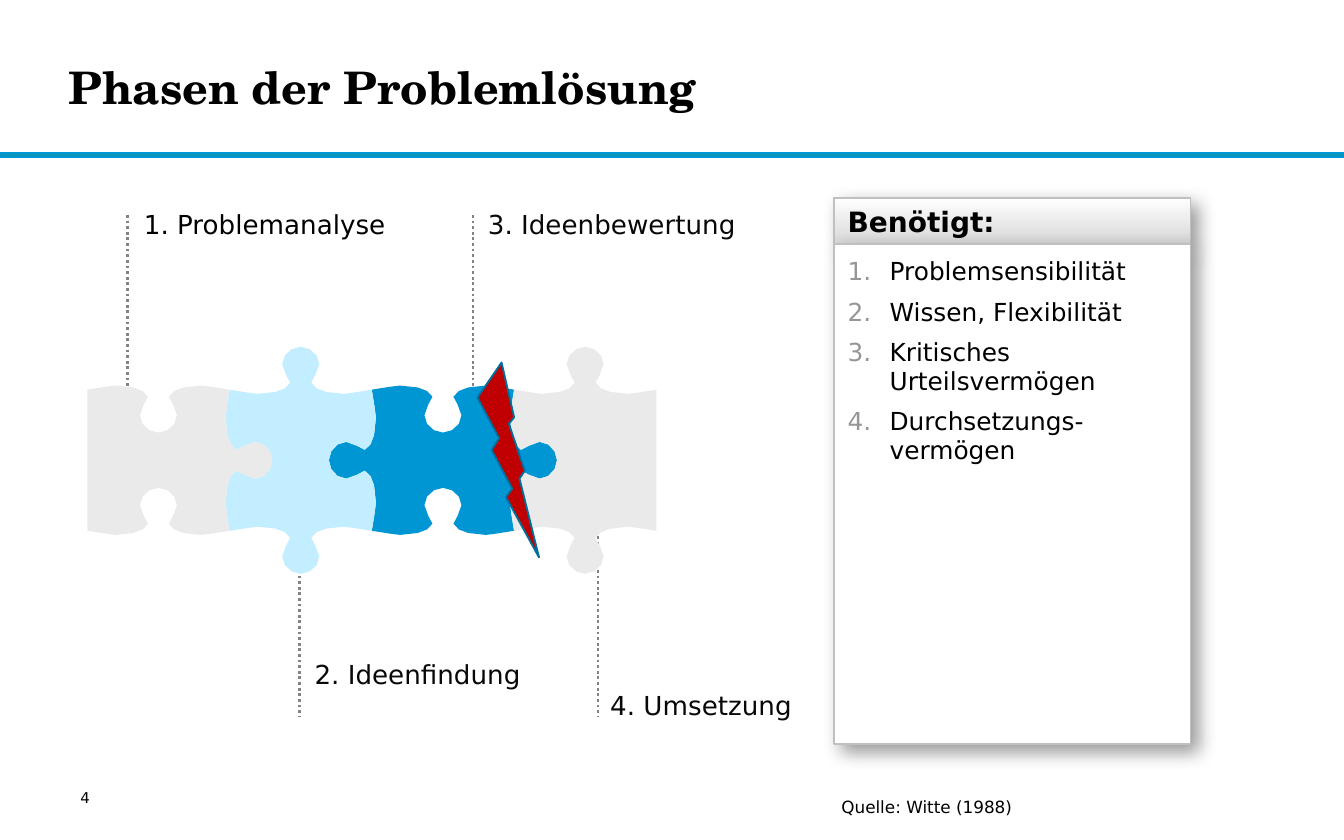
"""Builds a slide with the four phases of problem solving as a jigsaw."""
from math import hypot

from lxml.etree import SubElement
from pptx import Presentation
from pptx.dml.color import RGBColor
from pptx.enum.dml import MSO_LINE
from pptx.enum.shapes import MSO_CONNECTOR, MSO_SHAPE
from pptx.enum.text import MSO_ANCHOR, PP_ALIGN
from pptx.oxml.ns import qn
from pptx.util import Pt

BLACK = RGBColor(0x00, 0x00, 0x00)
INK = RGBColor(0x08, 0x08, 0x08)
WHITE = RGBColor(0xFF, 0xFF, 0xFF)
SILVER = RGBColor(0xD7, 0xD7, 0xD7)
BORDER = RGBColor(0xC0, 0xC0, 0xC0)
NUMBER = RGBColor(0x96, 0x96, 0x96)
DOTS = RGBColor(0x86, 0x82, 0x82)
TEAL = RGBColor(0x0C, 0x94, 0xB7)
BLUE = RGBColor(0x00, 0x96, 0xD3)
DARK_BLUE = RGBColor(0x00, 0x6F, 0x9C)
LIGHT_BLUE = RGBColor(0xC3, 0xEE, 0xFF)
GREY = RGBColor(0xEA, 0xEA, 0xEA)
RED = RGBColor(0xC0, 0x00, 0x00)

BODY_FONT = "DejaVu Sans"
TITLE_FONT = "TeX Gyre Schola"

PIECE_LEFT, PIECE_TOP, PIECE_WIDTH, PIECE_HEIGHT = 46.8, 208.8, 76.2, 75.6
EDGE_LENGTH = 76
HALF_KNOB = [(0, 0), (9.4, -1.5), (15.1, -2.2), (24.5, -1.2), (29.5, 0.7), (32.4, 3.8),
             (30.2, 7.9), (28.1, 13.7), (29.5, 18.3), (33.2, 21.7), (38, 23)]
KNOB = HALF_KNOB + [(EDGE_LENGTH - along, out) for along, out in HALF_KNOB[-2::-1]]
# Knob direction per side, clockwise from the top: 1 out, -1 in, 0 flat.
PIECES = [
    (2, BLUE, (-1, 1, -1, 1)),
    (1, LIGHT_BLUE, (1, -1, 1, -1)),
    (3, GREY, (1, 0, 1, -1)),
    (0, GREY, (-1, 1, -1, 0)),
]
CALLOUTS = [
    ("1. Problemanalyse", 68.4, 115.2, 225.4, 71.3, 105.8, BLACK),
    ("3. Ideenbewertung", 253.4, 115.2, 220.3, 255.6, 105.8, INK),
    ("4. Umsetzung", 320.4, 287.3, 383.8, 321.1, 363.6, INK),
    ("2. Ideenfindung", 160.6, 287.3, 383.8, 162.7, 347, INK),
]
NEEDS = ["Problemsensibilität", "Wissen, Flexibilität",
         "Kritisches Urteilsvermögen", "Durchsetzungs-vermögen"]


def edge(start, end, direction):
    if direction == 0:
        return [start, end]
    length = hypot(end[0] - start[0], end[1] - start[1])
    ux, uy = (end[0] - start[0]) / length, (end[1] - start[1]) / length
    scale = length / EDGE_LENGTH
    return [(start[0] + along * scale * ux + direction * out * uy,
             start[1] + along * scale * uy - direction * out * ux)
            for along, out in KNOB]


def write(shape, *lines, size=14, color=BLACK, font=BODY_FONT, bold=False,
          align=PP_ALIGN.LEFT, anchor=MSO_ANCHOR.TOP, insets=(7.2, 3.6, 7.2, 3.6),
          numbered=False):
    frame = shape.text_frame
    frame.word_wrap = True
    frame.vertical_anchor = anchor
    (frame.margin_left, frame.margin_top,
     frame.margin_right, frame.margin_bottom) = map(Pt, insets)
    for index, line in enumerate(lines):
        paragraph = frame.paragraphs[0] if index == 0 else frame.add_paragraph()
        paragraph.alignment = align
        if numbered:
            properties = paragraph._p.get_or_add_pPr()
            properties.set("marL", str(Pt(22.5)))
            properties.set("indent", str(Pt(-22.5)))
            bullet_color = SubElement(properties, qn("a:buClr"))
            SubElement(bullet_color, qn("a:srgbClr"), val=str(NUMBER))
            SubElement(properties, qn("a:buAutoNum"), type="arabicPeriod")
            paragraph.line_spacing = 0.95
            paragraph.space_after = Pt(6.7)
        run = paragraph.add_run()
        run.text = line
        run.font.name, run.font.size, run.font.bold = font, Pt(size), bold
        run.font.color.rgb = color


class SlideBuilder:
    def __init__(self, slide):
        self.shapes = slide.shapes

    def style(self, shape, fill, line=None):
        shape.shadow.inherit = False
        shape.fill.solid()
        shape.fill.fore_color.rgb = fill
        if line is None:
            shape.line.fill.background()
        else:
            shape.line.color.rgb = line
            shape.line.width = Pt(1)
        return shape

    def preset(self, kind, box, fill, line):
        return self.style(self.shapes.add_shape(kind, *map(Pt, box)), fill, line)

    def text(self, box, *lines, **formats):
        write(self.shapes.add_textbox(*map(Pt, box)), *lines, **formats)

    def dotted_line(self, x, top, bottom):
        line = self.shapes.add_connector(MSO_CONNECTOR.STRAIGHT,
                                         Pt(x), Pt(top), Pt(x), Pt(bottom))
        line.line.color.rgb = DOTS
        line.line.width = Pt(1.5)
        line.line.dash_style = MSO_LINE.ROUND_DOT
        SubElement(line._element.spPr, qn("a:effectLst"))

    def puzzle_piece(self, column, fill, directions):
        left, top = PIECE_LEFT + column * PIECE_WIDTH, PIECE_TOP
        right, bottom = left + PIECE_WIDTH, top + PIECE_HEIGHT
        corners = [(left, top), (right, top), (right, bottom), (left, bottom)]
        points = []
        for side, direction in enumerate(directions):
            points += edge(corners[side], corners[(side + 1) % 4], direction)[:-1]
        outline = [(Pt(x), Pt(y)) for x, y in points]
        builder = self.shapes.build_freeform(*outline[0])
        builder.add_line_segments(outline[1:], close=True)
        self.style(builder.convert_to_shape(), fill)

    def panel(self, box):
        shape = self.preset(MSO_SHAPE.RECTANGLE, box, WHITE, BORDER)
        effects = shape._element.spPr.find(qn("a:effectLst"))
        shadow = SubElement(effects, qn("a:outerShdw"), blurRad=str(Pt(10)),
                            dist=str(Pt(5)), dir=str(45 * 60000),
                            algn="tl", rotWithShape="0")
        shadow_color = SubElement(shadow, qn("a:srgbClr"), val=str(BLACK))
        SubElement(shadow_color, qn("a:alpha"), val="40000")
        return shape

    def gradient_panel(self, box):
        shape = self.panel(box)
        shape.fill.gradient()
        shape.fill.gradient_angle = 270
        for stop, position, color in zip(shape.fill.gradient_stops, (0, 1), (WHITE, SILVER)):
            stop.position = position
            stop.color.rgb = color
        return shape


def main():
    presentation = Presentation()
    presentation.slide_width, presentation.slide_height = Pt(720), Pt(450)
    builder = SlideBuilder(presentation.slides.add_slide(presentation.slide_layouts[6]))

    builder.preset(MSO_SHAPE.RECTANGLE, (0, 82, 720, 2.2), TEAL, BLUE)
    builder.text((36.5, 10.8, 538.5, 71.3), "Phasen der Problemlösung", size=24,
                 font=TITLE_FONT, bold=True, anchor=MSO_ANCHOR.MIDDLE, insets=(0, 0, 0, 0))
    builder.text((36, 419, 70.5, 20), "4", size=8)

    for label, x, top, bottom, label_left, label_top, color in CALLOUTS:
        builder.dotted_line(x, top, bottom)
        builder.text((label_left, label_top, 160, 28.8), label, color=color,
                     insets=(5.8, 5.8, 5, 5.8))
    for piece in PIECES:
        builder.puzzle_piece(*piece)

    write(builder.gradient_panel((447, 106, 190.8, 24.8)), "Benötigt:", size=15, bold=True,
          anchor=MSO_ANCHOR.MIDDLE, insets=(7.2, 5, 7.2, 5))
    write(builder.panel((447, 130.8, 190.8, 267.8)), *NEEDS, size=13.3, numbered=True,
          insets=(7.2, 7.2, 9.4, 5))
    builder.preset(MSO_SHAPE.LIGHTNING_BOLT, (255.8, 194.2, 33, 104.4), RED, DARK_BLUE)
    builder.text((422.6, 423.4, 147.6, 18), "Quelle: Witte (1988)", size=9,
                 align=PP_ALIGN.CENTER)
    presentation.save("out.pptx")


if __name__ == "__main__":
    main()
